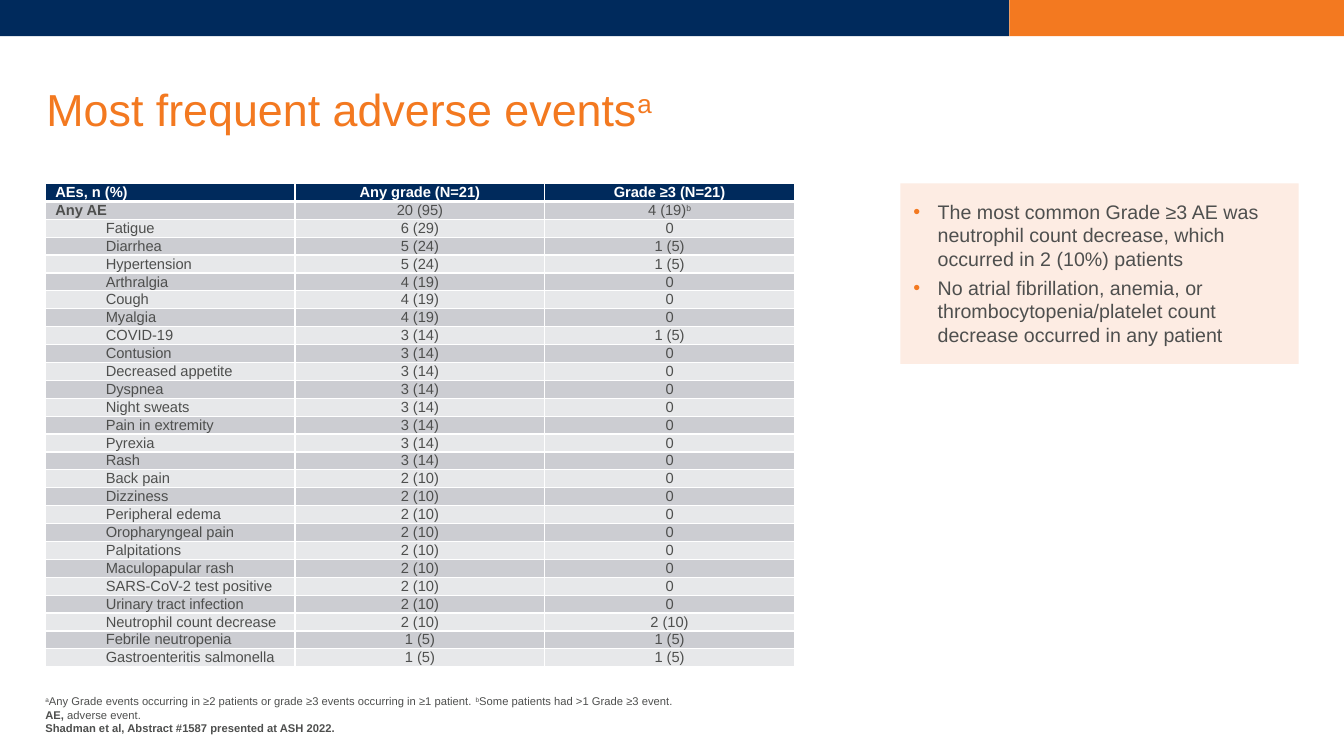
from dataclasses import dataclass

import lxml.etree
import pptx
import pptx.dml.color
import pptx.enum.shapes
import pptx.enum.text
import pptx.oxml
import pptx.oxml.ns
import pptx.shapes.autoshape
import pptx.slide
import pptx.table
import pptx.text.text
from pptx.util import Inches

NAVY, ORANGE, GREY, WHITE = "002A5C", "F37920", "4E4F4E", "FFFFFF"
DARK_BAND, LIGHT_BAND, PEACH = "CCCDD2", "E7E8EA", "FDECE3"
FONT = "Arial"
PATIENTS = 21
CENTER = pptx.enum.text.PP_ALIGN.CENTER
LEFT = pptx.enum.text.PP_ALIGN.LEFT


@dataclass(frozen=True)
class Run:
    text: str
    bold: bool = False
    superscript: bool = False


@dataclass(frozen=True)
class AdverseEvent:
    name: str
    any_grade: int
    grade_3: int = 0


EVENTS = [
    AdverseEvent("Fatigue", 6),
    AdverseEvent("Diarrhea", 5, 1),
    AdverseEvent("Hypertension", 5, 1),
    AdverseEvent("Arthralgia", 4),
    AdverseEvent("Cough", 4),
    AdverseEvent("Myalgia", 4),
    AdverseEvent("COVID-19", 3, 1),
    AdverseEvent("Contusion", 3),
    AdverseEvent("Decreased appetite", 3),
    AdverseEvent("Dyspnea", 3),
    AdverseEvent("Night sweats", 3),
    AdverseEvent("Pain in extremity", 3),
    AdverseEvent("Pyrexia", 3),
    AdverseEvent("Rash", 3),
    AdverseEvent("Back pain", 2),
    AdverseEvent("Dizziness", 2),
    AdverseEvent("Peripheral edema", 2),
    AdverseEvent("Oropharyngeal pain", 2),
    AdverseEvent("Palpitations", 2),
    AdverseEvent("Maculopapular rash", 2),
    AdverseEvent("SARS-CoV-2 test positive", 2),
    AdverseEvent("Urinary tract infection", 2),
    AdverseEvent("Neutrophil count decrease", 2, 2),
    AdverseEvent("Febrile neutropenia", 1, 1),
    AdverseEvent("Gastroenteritis salmonella", 1, 1),
]
FOOTNOTES = [
    [
        Run("a", superscript=True),
        Run("Any Grade events occurring in ≥2 patients or grade ≥3 events occurring in ≥1 patient. "),
        Run("b", superscript=True),
        Run("Some patients had >1 Grade ≥3 event."),
    ],
    [Run("AE, ", bold=True), Run("adverse event.")],
    [Run("Shadman et al, Abstract #1587 presented at ASH 2022.", bold=True)],
]
FINDINGS = [
    "The most common Grade ≥3 AE was neutrophil count decrease, which occurred in 2 (10%) patients",
    "No atrial fibrillation, anemia, or thrombocytopenia/platelet count decrease occurred in any patient",
]


def rgb(color: str) -> pptx.dml.color.RGBColor:
    return pptx.dml.color.RGBColor.from_string(color)


def add_runs(paragraph: pptx.text.text._Paragraph, runs: list[Run], size: float, color: str) -> None:
    for item in runs:
        run = paragraph.add_run()
        run.text = item.text
        run.font.name = FONT
        run.font.size = pptx.util.Pt(size)
        run.font.bold = item.bold
        run.font.color.rgb = rgb(color)
        if item.superscript:
            run._r.get_or_add_rPr().set("baseline", "30000")


def set_margins(frame: pptx.text.text.TextFrame, left: float, top: float, right: float, bottom: float) -> None:
    frame.margin_left, frame.margin_top = Inches(left), Inches(top)
    frame.margin_right, frame.margin_bottom = Inches(right), Inches(bottom)


def set_indent(paragraph: pptx.text.text._Paragraph, margin: float, first_line: float) -> None:
    properties = paragraph._p.get_or_add_pPr()
    properties.set("marL", str(Inches(margin)))
    properties.set("indent", str(Inches(first_line)))


def add_rectangle(
    slide: pptx.slide.Slide, left: float, top: float, width: float, height: float, color: str
) -> pptx.shapes.autoshape.Shape:
    shape = slide.shapes.add_shape(
        pptx.enum.shapes.MSO_SHAPE.RECTANGLE, Inches(left), Inches(top), Inches(width), Inches(height)
    )
    shape.shadow.inherit = False
    shape.fill.solid()
    shape.fill.fore_color.rgb = rgb(color)
    shape.line.fill.background()
    return shape


def add_title(slide: pptx.slide.Slide) -> None:
    title = slide.shapes.title
    title.left, title.top, title.width, title.height = Inches(0.46), Inches(0.63), Inches(12.43), Inches(0.97)
    frame = title.text_frame
    frame.vertical_anchor = pptx.enum.text.MSO_ANCHOR.MIDDLE
    set_margins(frame, 0, 0, 0, 0)
    paragraph = frame.paragraphs[0]
    paragraph.alignment = LEFT
    paragraph.line_spacing = 0.9
    add_runs(paragraph, [Run("Most frequent adverse events"), Run("a", superscript=True)], 32, ORANGE)


def set_borders(cell: pptx.table._Cell, top: float, bottom: float) -> None:
    properties = cell._tc.get_or_add_tcPr()
    for side, width in (("L", 1), ("R", 1), ("T", top), ("B", bottom)):
        properties.append(pptx.oxml.parse_xml(
            f'<a:ln{side} {pptx.oxml.ns.nsdecls("a")} w="{pptx.util.Pt(width)}">'
            f'<a:solidFill><a:srgbClr val="{WHITE}"/></a:solidFill></a:ln{side}>'
        ))


def patients(count: int) -> str:
    """Format a count with its share of all patients."""
    return f"{count} ({100 * count / PATIENTS:.0f})" if count else "0"


def table_rows() -> list[list[list[Run]]]:
    header = [[Run(text, bold=True)] for text in ("AEs, n (%)", f"Any grade (N={PATIENTS})", f"Grade ≥3 (N={PATIENTS})")]
    total = [[Run("Any AE", bold=True)], [Run(patients(20))], [Run(patients(4)), Run("b", superscript=True)]]
    events = [[[Run(event.name)], [Run(patients(event.any_grade))], [Run(patients(event.grade_3))]] for event in EVENTS]
    return [header, total, *events]


def add_event_table(slide: pptx.slide.Slide) -> None:
    rows = table_rows()
    table = slide.shapes.add_table(
        len(rows), 3, Inches(0.45), Inches(1.82), Inches(7.43), Inches(4.8)
    ).table
    for row_index, row in enumerate(rows):
        fill = NAVY if row_index == 0 else DARK_BAND if row_index % 2 else LIGHT_BAND
        for column_index, runs in enumerate(row):
            cell = table.cell(row_index, column_index)
            set_borders(cell, 3 if row_index == 1 else 1, 3 if row_index == 0 else 1)
            cell.fill.solid()
            cell.fill.fore_color.rgb = rgb(fill)
            cell.margin_left = cell.margin_right = Inches(0.1)
            cell.margin_top = cell.margin_bottom = 0
            cell.vertical_anchor = pptx.enum.text.MSO_ANCHOR.MIDDLE
            paragraph = cell.text_frame.paragraphs[0]
            if column_index:
                paragraph.alignment = CENTER
            elif row_index > 1:
                paragraph.level = 1
                set_indent(paragraph, 0.5, 0)
            add_runs(paragraph, runs, 10.5, GREY if row_index else WHITE)


def add_findings(slide: pptx.slide.Slide) -> None:
    frame = add_rectangle(slide, 8.93, 1.82, 3.95, 1.79, PEACH).text_frame
    frame.word_wrap = True
    frame.vertical_anchor = pptx.enum.text.MSO_ANCHOR.TOP
    set_margins(frame, 0.12, 0.16, 0.1, 0.05)
    for index, finding in enumerate(FINDINGS):
        paragraph = frame.add_paragraph() if index else frame.paragraphs[0]
        paragraph.alignment = LEFT
        paragraph.space_after = pptx.util.Pt(4)
        set_indent(paragraph, 0.25, -0.24)
        properties = paragraph._p.get_or_add_pPr()
        bullet_color = lxml.etree.SubElement(properties, pptx.oxml.ns.qn("a:buClr"))
        lxml.etree.SubElement(bullet_color, pptx.oxml.ns.qn("a:srgbClr"), val=ORANGE)
        lxml.etree.SubElement(properties, pptx.oxml.ns.qn("a:buFont"), typeface=FONT)
        lxml.etree.SubElement(properties, pptx.oxml.ns.qn("a:buChar"), char="•")
        add_runs(paragraph, [Run(finding)], 14, GREY)


def add_footnotes(slide: pptx.slide.Slide) -> None:
    frame = slide.shapes.add_textbox(Inches(0.45), Inches(6.87), Inches(9.33), Inches(0.42)).text_frame
    frame.word_wrap = True
    frame.vertical_anchor = pptx.enum.text.MSO_ANCHOR.BOTTOM
    set_margins(frame, 0, 0, 0, 0)
    for index, runs in enumerate(FOOTNOTES):
        add_runs(frame.add_paragraph() if index else frame.paragraphs[0], runs, 8, GREY)


def main() -> None:
    presentation = pptx.Presentation()
    presentation.slide_width, presentation.slide_height = Inches(13.33), Inches(7.5)
    slide = presentation.slides.add_slide(presentation.slide_layouts.get_by_name("Title Only"))
    add_rectangle(slide, 0, 0, 10.01, 0.36, NAVY)
    add_rectangle(slide, 10.01, 0, 3.32, 0.36, ORANGE)
    add_footnotes(slide)
    add_title(slide)
    add_event_table(slide)
    add_findings(slide)
    presentation.save("out.pptx")


if __name__ == "__main__":
    main()
